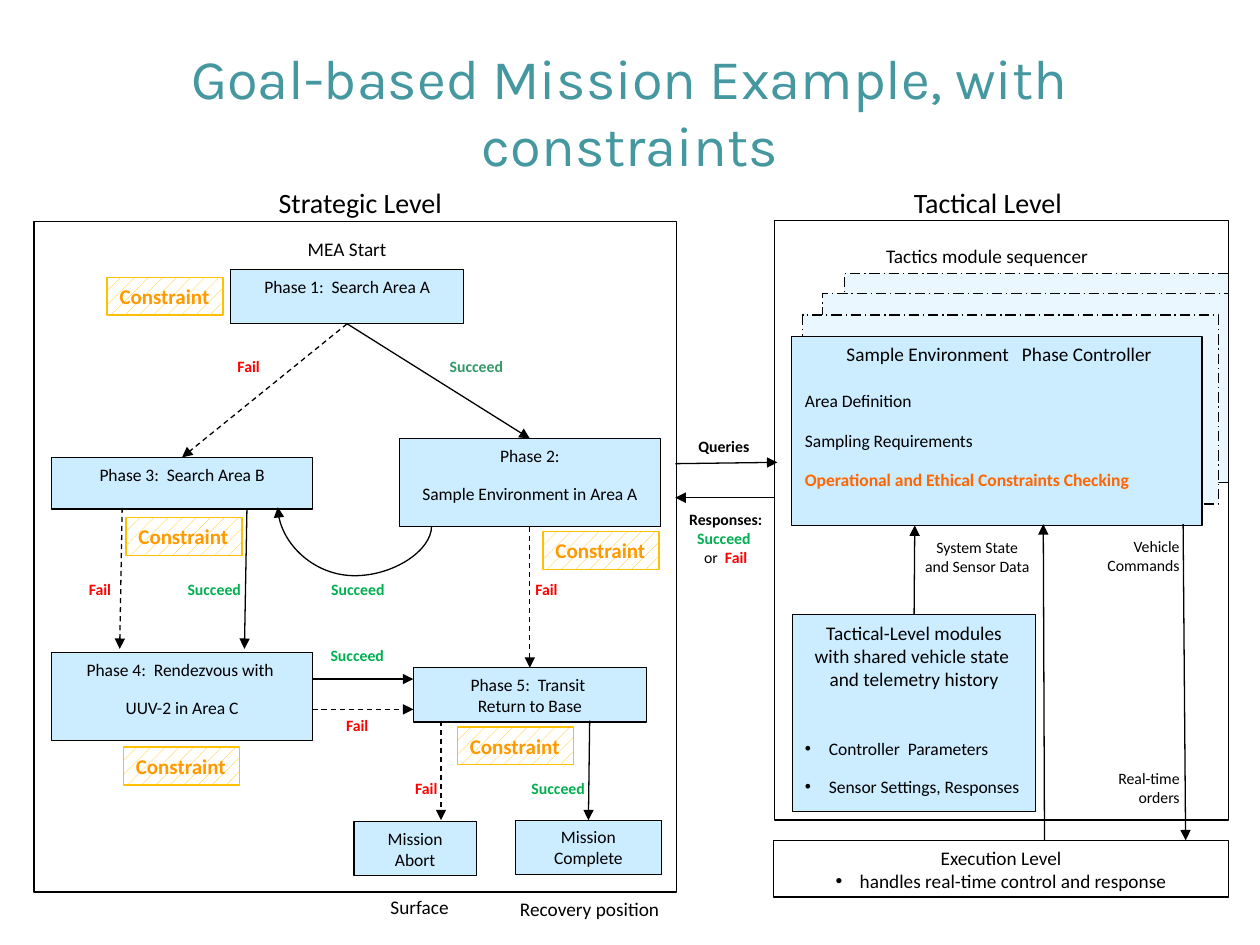
"""Build the goal-based mission slide with its strategic and tactical levels."""
import pptx
import pptx.dml.color
import pptx.enum.dml
import pptx.enum.shapes
import pptx.enum.text
import pptx.oxml
import pptx.oxml.ns
import pptx.util

Inches = pptx.util.Inches
Pt = pptx.util.Pt
ALIGN = pptx.enum.text.PP_ALIGN
DASH = pptx.enum.dml.MSO_LINE
KIND = pptx.enum.shapes.MSO_CONNECTOR
TOP, BOTTOM = 0, 2
COLOURS = {
    "text": "000000", "white": "FFFFFF", "phase": "CCECFF", "stack": "EBF7FF",
    "title": "4597A0", "fail": "FF0000", "succeed": "00B050", "muted": "339966",
    "ethics": "FF6600", "constraint": "FF9900", "hatch": "FFC000",
}


def colour(name):
    return pptx.dml.color.RGBColor.from_string(COLOURS[name])


def apply(target, values):
    for name, value in values.items():
        setattr(target, name, value)


def make_element(tag, **attributes):
    element = pptx.oxml.parse_xml(f"<a:{tag} {pptx.oxml.ns.nsdecls('a')}/>")
    for name, value in attributes.items():
        element.set(name, value)
    return element


def write_paragraph(para, spans, size, align, gap=0, bullet=False, font="Calibri"):
    """Fill a paragraph with (text, colour, bold) spans."""
    if bullet:
        properties = para._p.get_or_add_pPr()
        apply_indent = {"marL": Inches(0.19), "indent": -Inches(0.19)}
        for name, value in apply_indent.items():
            properties.set(name, str(value))
        properties.append(make_element("buFont", typeface="Arial"))
        properties.append(make_element("buChar", char="•"))
    apply(para, {"alignment": align, "space_before": Pt(0), "space_after": Pt(gap)})
    for text, name, bold in spans:
        span = para.add_run()
        span.text = text
        apply(span.font, {"size": Pt(size), "name": font, "bold": bold})
        span.font.color.rgb = colour(name)


def write_lines(frame, text, size, align, gap=0, name="text", bold=False, bullet=False):
    frame.word_wrap = True
    frame.vertical_anchor = pptx.enum.text.MSO_ANCHOR.TOP
    for index, line in enumerate(text.split("\n")):
        para = frame.add_paragraph() if index else frame.paragraphs[0]
        write_paragraph(para, [(line, name, bold)], size, align, gap, bullet)


def add_box(page, place, fill=None, line="text", dash=None):
    box = page.shapes.add_shape(
        pptx.enum.shapes.MSO_SHAPE.RECTANGLE, *map(Inches, place))
    box.shadow.inherit = False
    if fill:
        box.fill.solid()
        box.fill.fore_color.rgb = colour(fill)
    else:
        box.fill.background()
    box.line.color.rgb = colour(line)
    apply(box.line, {"width": Pt(0.75), "dash_style": dash})
    return box


def add_phase(page, place, text, gap=10):
    box = add_box(page, place, "phase")
    write_lines(box.text_frame, text, 10, ALIGN.CENTER, gap)
    return box


def add_constraint(page, left, top):
    box = add_box(page, (left, top, 0.92, 0.3), line="hatch")
    box.fill.patterned()
    box.fill.pattern = pptx.enum.dml.MSO_PATTERN.PERCENT_10
    box.fill.fore_color.rgb = colour("hatch")
    box.fill.back_color.rgb = colour("white")
    write_lines(box.text_frame, "Constraint", 12, ALIGN.LEFT, 0, "constraint", True)
    box.text_frame.word_wrap = False


def add_label(page, place, text, size, align=ALIGN.CENTER, **style):
    box = page.shapes.add_textbox(*map(Inches, place))
    write_lines(box.text_frame, text, size, align, **style)


def add_outcome(page, place, outcome, align, name=None):
    add_label(page, place, outcome, 9, align, name=name or outcome.lower(), bold=True)


def add_arrow(page, start, end, dashed=False, begin=None, finish=None, kind=KIND.STRAIGHT):
    """Draw an arrow, joined to the (box, side) pairs that are given."""
    arrow = page.shapes.add_connector(kind, *map(Inches, start + end))
    if begin:
        arrow.begin_connect(*begin)
    if finish:
        arrow.end_connect(*finish)
    arrow.line.color.rgb = colour("text")
    apply(arrow.line, {"width": Pt(0.75), "dash_style": DASH.DASH if dashed else None})
    arrow.line._get_or_add_ln().append(make_element("tailEnd", type="triangle"))
    arrow._element.spPr.append(make_element("effectLst"))
    return arrow


def add_return_curve(page):
    """Curve from below Phase 2 back up to Phase 3."""
    curve = add_arrow(page, (2.74, 4.71), (2.89, 3.49), kind=KIND.CURVE)
    properties = curve._element.spPr
    properties.find(pptx.oxml.ns.qn("a:xfrm")).set("rot", str(270 * 60000))
    geometry = properties.find(pptx.oxml.ns.qn("a:prstGeom"))
    geometry.get_or_add_avLst().append(
        make_element("gd", name="adj1", fmla="val -262800"))


def add_title(page):
    title = page.shapes.title
    apply(title, {"left": Inches(0.25), "top": Inches(0.25),
                  "width": Inches(9.5), "height": Inches(1.25)})
    apply(title.text_frame, {"word_wrap": True,
                             "auto_size": pptx.enum.text.MSO_AUTO_SIZE.NONE,
                             "vertical_anchor": pptx.enum.text.MSO_ANCHOR.MIDDLE})
    write_paragraph(title.text_frame.paragraphs[0],
                    [("Goal-based Mission Example, with constraints", "title", False)],
                    32, ALIGN.CENTER, font="Karla")


def add_strategic_level(page):
    add_box(page, (0.27, 1.76, 5.1, 5.32), "white")
    search_a = add_phase(page, (1.83, 2.14, 1.85, 0.43), "Phase 1:  Search Area A")
    sample = add_phase(page, (3.17, 3.48, 2.07, 0.7),
                       "Phase 2:\nSample Environment in Area A")
    search_b = add_phase(page, (0.41, 3.63, 2.07, 0.41), "Phase 3:  Search Area B")
    add_phase(page, (0.41, 5.18, 2.07, 0.7), "Phase 4:  Rendezvous with \nUUV-2 in Area C")
    transit = add_phase(page, (3.28, 5.3, 1.85, 0.43),
                        "Phase 5:  Transit \nReturn to Base", 0)
    add_phase(page, (2.81, 6.52, 0.97, 0.43), "Mission Abort")
    complete = add_phase(page, (4.09, 6.51, 1.16, 0.43), "Mission Complete")

    add_arrow(page, (2.76, 2.57), (4.2, 3.48), False, (search_a, BOTTOM), (sample, TOP))
    add_arrow(page, (2.76, 2.57), (1.44, 3.63), True, (search_a, BOTTOM), (search_b, TOP))
    add_arrow(page, (4.2, 4.18), (4.2, 5.3), True, (sample, BOTTOM), (transit, TOP))
    add_arrow(page, (4.68, 5.72), (4.67, 6.51), finish=(complete, TOP))
    for start, end, dashed in [
        ((1.96, 4.04), (1.94, 5.15), False), ((0.97, 4.03), (0.95, 5.15), True),
        ((2.48, 5.39), (3.28, 5.39), False), ((2.48, 5.63), (3.28, 5.63), True),
        ((3.5, 5.72), (3.5, 6.51), True),
    ]:
        add_arrow(page, start, end, dashed)
    add_return_curve(page)

    add_outcome(page, (3.47, 2.78, 1.01, 0.37), "Succeed", ALIGN.LEFT, "muted")
    add_outcome(page, (4.15, 4.55, 0.68, 0.37), "Fail", ALIGN.LEFT)
    for left, top in [(1.51, 2.78), (0.33, 4.55), (2.92, 6.13)]:
        add_outcome(page, (left, top, 0.65, 0.37), "Fail", ALIGN.RIGHT)
    for left, top in [(1, 4.55), (3.73, 6.13)]:
        add_outcome(page, (left, top, 1.01, 0.37), "Succeed", ALIGN.RIGHT)
    add_outcome(page, (2.43, 4.55, 0.82, 0.29), "Succeed", ALIGN.CENTER)
    for outcome, top in [("Succeed", 5.08), ("Fail", 5.63)]:
        add_outcome(page, (2.33, top, 1.01, 0.37), outcome, ALIGN.CENTER)
    for place in [(0.85, 2.2), (3.63, 5.77), (0.98, 5.93), (4.31, 4.22), (1, 4.11)]:
        add_constraint(page, *place)
    add_label(page, (1.31, 1.42, 3.1, 0.45), "Strategic Level", 16)
    add_label(page, (1.85, 1.83, 1.81, 0.22), "MEA Start", 11)
    add_label(page, (2.92, 7.06, 0.82, 0.22), "Surface", 11)
    add_label(page, (4, 7.07, 1.36, 0.22), "Recovery position", 11)


def add_exchange(page):
    """Queries and responses between the two levels."""
    add_arrow(page, (5.36, 3.68), (6.17, 3.67))
    add_arrow(page, (6.15, 3.95), (5.36, 3.95))
    add_label(page, (5.24, 3.42, 1.01, 0.37), "Queries", 9, bold=True)
    frame = page.shapes.add_textbox(*map(Inches, (5.31, 4, 0.9, 0.88))).text_frame
    frame.word_wrap = True
    write_paragraph(frame.paragraphs[0], [("Responses: ", "text", True),
                    ("Succeed ", "succeed", True)], 9, ALIGN.CENTER)
    write_paragraph(frame.add_paragraph(), [("or  ", "text", False),
                    ("Fail", "fail", True)], 9, ALIGN.CENTER)


def add_tactical_level(page):
    for place in [(6.7, 2.17, 3.05, 1.5), (6.53, 2.33, 3.22, 1.5), (6.37, 2.5, 3.3, 1.5)]:
        add_box(page, place, "stack", dash=DASH.LONG_DASH_DOT)
    add_box(page, (6.28, 2.67, 3.26, 1.5), "phase")
    add_box(page, (6.15, 1.75, 3.6, 4.76))
    modules = add_box(page, (6.29, 4.88, 1.93, 1.56), "phase")
    execution = add_box(page, (6.14, 6.67, 3.61, 0.45))
    write_lines(execution.text_frame, "Execution Level", 11, ALIGN.CENTER)
    write_paragraph(execution.text_frame.add_paragraph(),
                    [("handles real-time control and response", "text", False)],
                    11, ALIGN.CENTER, bullet=True)

    add_arrow(page, (7.26, 4.88), (7.26, 4.17), begin=(modules, TOP))
    add_arrow(page, (9.39, 4.16), (9.41, 6.67))
    add_arrow(page, (8.29, 6.67), (8.28, 4.16))

    add_label(page, (6.29, 1.42, 3.1, 0.45), "Tactical Level", 16)
    add_label(page, (6.93, 1.89, 1.81, 0.22), "Tactics module sequencer", 11)
    add_label(page, (6.37, 2.67, 3.12, 0.38), "Sample Environment   Phase Controller", 11)
    for row, text in enumerate(["Area Definition", "Sampling Requirements"]):
        add_label(page, (6.29, 3.05 + 0.31 * row, 2.48, 0.4), text, 10, ALIGN.LEFT)
    add_label(page, (6.29, 3.67, 3.12, 0.4), "Operational and Ethical Constraints Checking",
              10, ALIGN.LEFT, name="ethics", bold=True)
    add_label(page, (7.23, 4.22, 1.05, 0.37), "System State and Sensor Data", 9)
    add_label(page, (8.3, 4.21, 1.16, 0.38), "Vehicle\nCommands", 9, ALIGN.RIGHT)
    add_label(page, (8.74, 6.05, 0.72, 0.38), "Real-time orders", 9, ALIGN.RIGHT)
    add_label(page, (6.33, 4.88, 1.85, 0.78), "Tactical-Level modules with shared "
              "vehicle state \nand telemetry history", 11)
    for row, text in enumerate(["Controller  Parameters", "Sensor Settings, Responses"]):
        add_label(page, (6.29, 5.81 + 0.3 * row, 1.94, 0.3), text, 10, ALIGN.LEFT, bullet=True)


def main():
    deck = pptx.Presentation()
    apply(deck, {"slide_width": Inches(10), "slide_height": Inches(7.5)})
    page = deck.slides.add_slide(deck.slide_layouts[5])
    add_title(page)
    add_strategic_level(page)
    add_tactical_level(page)
    add_exchange(page)
    deck.save("out.pptx")


if __name__ == "__main__":
    main()
